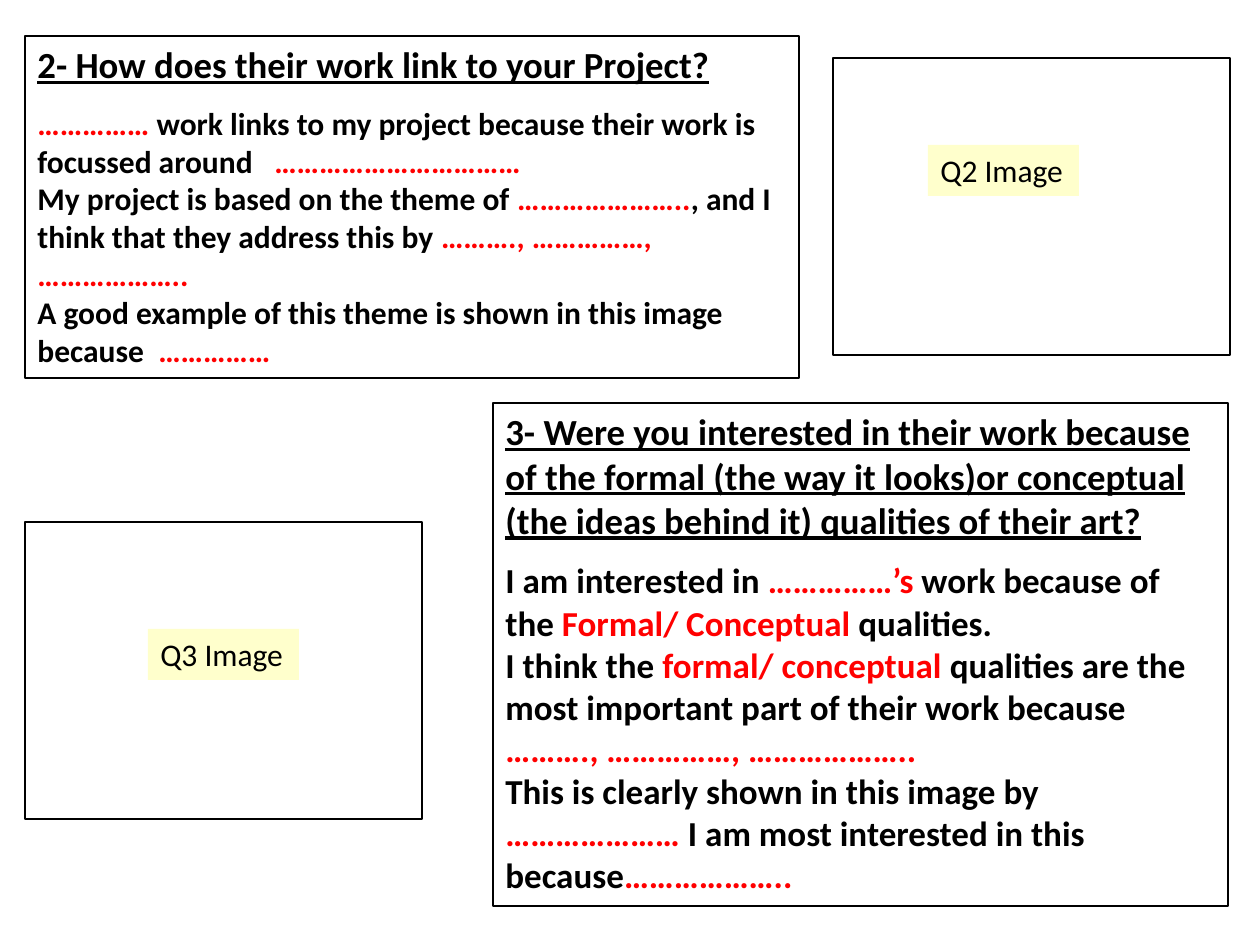
import pptx
import pptx.util
import pptx.dml.color
import pptx.enum.shapes
import pptx.enum.text

SCALE = 914400 / 126
FONT = "Calibri"
BLACK = pptx.dml.color.RGBColor(0, 0, 0)
WHITE = pptx.dml.color.RGBColor(255, 255, 255)
RED = pptx.dml.color.RGBColor(255, 0, 0)
CREAM = pptx.dml.color.RGBColor(255, 255, 204)

THEME = (
    "|……………| work links to my project because their work is focussed around   |……………………………",
    "My project is based on the theme of |…………………..|, and I think that they address this by "
    "|………., ……………, ………………..",
    "A good example of this theme is shown in this image because  |……………",
)
INTEREST = (
    "I am interested in |……………’s| work because of the |Formal/ Conceptual |qualities.",
    "I think the |formal/ conceptual |qualities are the most important part of their work "
    "because |………., ……………, ………………..",
    "This is clearly shown in this image by |…………………| I am most interested in this "
    "because|………………..",
)


def px(count):
    """Turn whole pixels into EMU."""
    return pptx.util.Emu(round(count * SCALE))


def style(item, **values):
    """Set each named attribute of an item."""
    for name, value in values.items():
        setattr(item, name, value)


def add_box(slide, area, fill=None, line=None):
    """Add a plain rectangle with an optional fill and outline."""
    kind = pptx.enum.shapes.MSO_SHAPE.RECTANGLE
    box = slide.shapes.add_shape(kind, *map(px, area))
    box.shadow.inherit = False
    if fill is None:
        box.fill.background()
    else:
        box.fill.solid()
        box.fill.fore_color.rgb = fill
    if line is None:
        box.line.fill.background()
    else:
        box.line.color.rgb = line
        box.line.width = pptx.util.Pt(0.75)
    style(box.text_frame, word_wrap=True,
          vertical_anchor=pptx.enum.text.MSO_ANCHOR.TOP)
    return box


def add_run(para, text, size, color=BLACK, **values):
    """Add a run of text in the slide font."""
    run = para.add_run()
    run.text = text
    style(run.font, name=FONT, size=pptx.util.Pt(size), **values)
    run.font.color.rgb = color


def add_panel(slide, area, head, lines, size):
    """Add a question with answer lines, whose bar-marked parts are red."""
    frame = add_box(slide, area, WHITE, BLACK).text_frame
    para = frame.paragraphs[0]
    para.alignment = pptx.enum.text.PP_ALIGN.LEFT
    para.space_after = pptx.util.Pt(10)
    add_run(para, head, 21, bold=True, underline=True)
    for line in lines:
        para = frame.add_paragraph()
        para.alignment = pptx.enum.text.PP_ALIGN.LEFT
        for index, part in enumerate(line.split("|")):
            if part:
                add_run(para, part, size, RED if index % 2 else BLACK, bold=True)


def add_label(slide, left, top, text):
    """Add a cream label."""
    para = add_box(slide, (left, top, 151, 51), CREAM).text_frame.paragraphs[0]
    para.alignment = pptx.enum.text.PP_ALIGN.LEFT
    add_run(para, text, 18)


def main():
    """Build and save the slide."""
    deck = pptx.Presentation()
    style(deck, slide_width=px(1260), slide_height=px(945))
    slide = deck.slides.add_slide(deck.slide_layouts[6])
    add_panel(slide, (25, 36, 774, 342),
              "2- How does their work link to your Project?", THEME, 18)
    add_panel(slide, (493, 403, 735, 503),
              "3- Were you interested in their work because of the formal (the way it "
              "looks)or conceptual (the ideas behind it) qualities of their art?",
              INTEREST, 20)
    for left, top in ((833, 58), (25, 522)):
        add_box(slide, (left, top, 397, 297), line=BLACK)
    add_label(slide, 928, 145, "Q2 Image")
    add_label(slide, 148, 629, "Q3 Image")
    deck.save("out.pptx")


if __name__ == "__main__":
    main()
